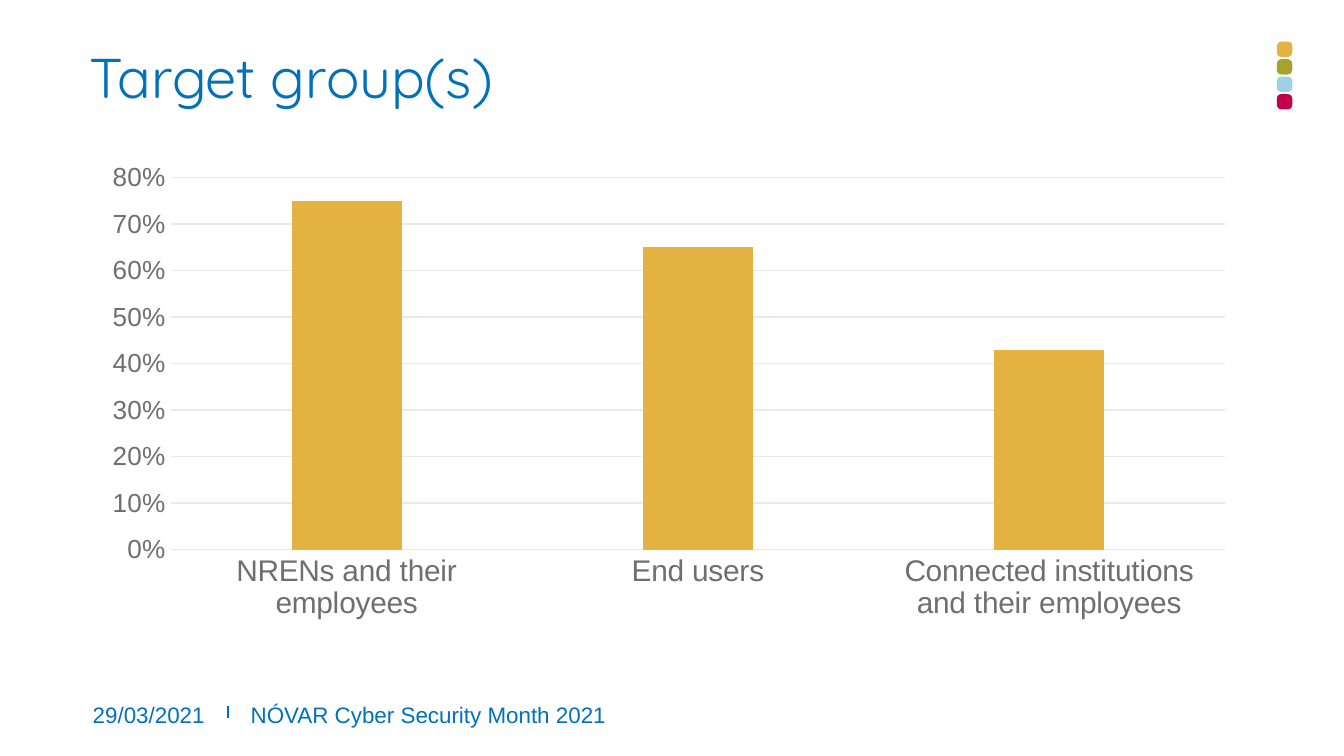
from dataclasses import dataclass

from lxml.etree import SubElement
from pptx import Presentation
from pptx.chart.data import CategoryChartData
from pptx.dml.color import RGBColor
from pptx.enum.chart import XL_CHART_TYPE, XL_TICK_MARK
from pptx.enum.shapes import MSO_CONNECTOR, MSO_SHAPE
from pptx.enum.text import MSO_ANCHOR, MSO_AUTO_SIZE, PP_ALIGN
from pptx.oxml.ns import qn
from pptx.util import Emu, Pt

PX = 4572


@dataclass(frozen=True)
class Theme:
    blue: str = "0071BA"
    grey: str = "706F6F"
    grid: str = "EAE9E9"
    amber: str = "E3B240"
    markers: tuple = ("E3B240", "A5A32E", "9DD1E7", "C3004D")
    title_font: str = "Quicksand"
    body_font: str = "Arial"
    title_size: int = 30
    category_size: int = 16
    value_size: int = 14
    chart_size: int = 10
    footer_size: int = 12


THEME = Theme()
AUDIENCE_SHARES = {
    "NRENs and their employees": 0.75,
    "End users": 0.65,
    "Connected institutions and their employees": 0.43,
}


def px(*lengths):
    return [Emu(length * PX) for length in lengths]


def color(code):
    return RGBColor.from_string(code)


def style_font(font, name, size, code):
    font.name = name
    font.size = Pt(size)
    font.bold = False
    font.color.rgb = color(code)


def style_line(line, code, width):
    line.color.rgb = color(code)
    line.width = Pt(width)


def write_text(shape, text, name, size, anchor):
    frame = shape.text_frame
    frame.text = text
    frame.word_wrap = True
    frame.auto_size = MSO_AUTO_SIZE.NONE
    frame.vertical_anchor = anchor
    frame.margin_left = frame.margin_right = 0
    frame.margin_top = frame.margin_bottom = 0
    para = frame.paragraphs[0]
    para.alignment = PP_ALIGN.LEFT
    style_font(para.runs[0].font, name, size, THEME.blue)
    return para


def add_title(page, left, top, width, height):
    title = page.shapes.title
    title.left, title.top, title.width, title.height = px(left, top, width, height)
    para = write_text(title, "Target group(s)", THEME.title_font, THEME.title_size, MSO_ANCHOR.TOP)
    para.line_spacing = 0.9


def add_markers(page, left, top, size, pitch):
    for index, code in enumerate(THEME.markers):
        box = px(left, top + index * pitch, size, size)
        marker = page.shapes.add_shape(MSO_SHAPE.ROUNDED_RECTANGLE, *box)
        marker.adjustments[0] = 0.3
        marker.rotation = 90
        marker.shadow.inherit = False
        marker.fill.solid()
        marker.fill.fore_color.rgb = color(code)
        marker.line.fill.background()


def add_share_chart(page, left, top, width, height):
    data = CategoryChartData(number_format="0%")
    data.categories = AUDIENCE_SHARES.keys()
    data.add_series("Series 1", AUDIENCE_SHARES.values())
    frame = page.shapes.add_chart(
        XL_CHART_TYPE.COLUMN_CLUSTERED, *px(left, top, width, height), data
    )
    chart = frame.chart
    chart.has_title = False
    chart.has_legend = False
    style_font(chart.font, THEME.body_font, THEME.chart_size, THEME.grey)

    plot = chart.plots[0]
    plot.vary_by_categories = False
    plot.gap_width = 219
    plot.overlap = -27
    fill = plot.series[0].format.fill
    fill.solid()
    fill.fore_color.rgb = color(THEME.amber)

    categories, values = chart.category_axis, chart.value_axis
    for axis, size in ((categories, THEME.category_size), (values, THEME.value_size)):
        axis.major_tick_mark = axis.minor_tick_mark = XL_TICK_MARK.NONE
        style_font(axis.tick_labels.font, THEME.body_font, size, THEME.grey)
    style_line(categories.format.line, THEME.grid, 0.75)
    values.minimum_scale, values.maximum_scale, values.major_unit = 0, 0.8, 0.1
    values.format.line.fill.background()
    values.has_major_gridlines = True
    style_line(values.major_gridlines.format.line, THEME.grid, 0.75)
    values.tick_labels.number_format = "0%"
    values.tick_labels.number_format_is_linked = False


def add_footer(page, left, top, height):
    entries = ((0, 188, "29/03/2021"), (235, 676, "NÓVAR Cyber Security Month 2021"))
    for offset, width, text in entries:
        box = page.shapes.add_textbox(*px(left + offset, top, width, height))
        write_text(box, text, THEME.body_font, THEME.footer_size, MSO_ANCHOR.MIDDLE)
    ends = px(left + 201, top + 7, left + 201, top + 25)
    divider = page.shapes.add_connector(MSO_CONNECTOR.STRAIGHT, *ends)
    style_line(divider.line, THEME.blue, 1)
    SubElement(divider.element.spPr, qn("a:effectLst"))


def main():
    deck = Presentation()
    deck.slide_width, deck.slide_height = px(2000, 1125)
    page = deck.slides.add_slide(deck.slide_layouts[5])
    add_markers(page, left=1900, top=62, size=23, pitch=26)
    add_title(page, left=133, top=75, width=1724, height=154)
    add_share_chart(page, left=133, top=228, width=1724, height=708)
    add_footer(page, left=138, top=1043, height=42)
    deck.save("out.pptx")


if __name__ == "__main__":
    main()
